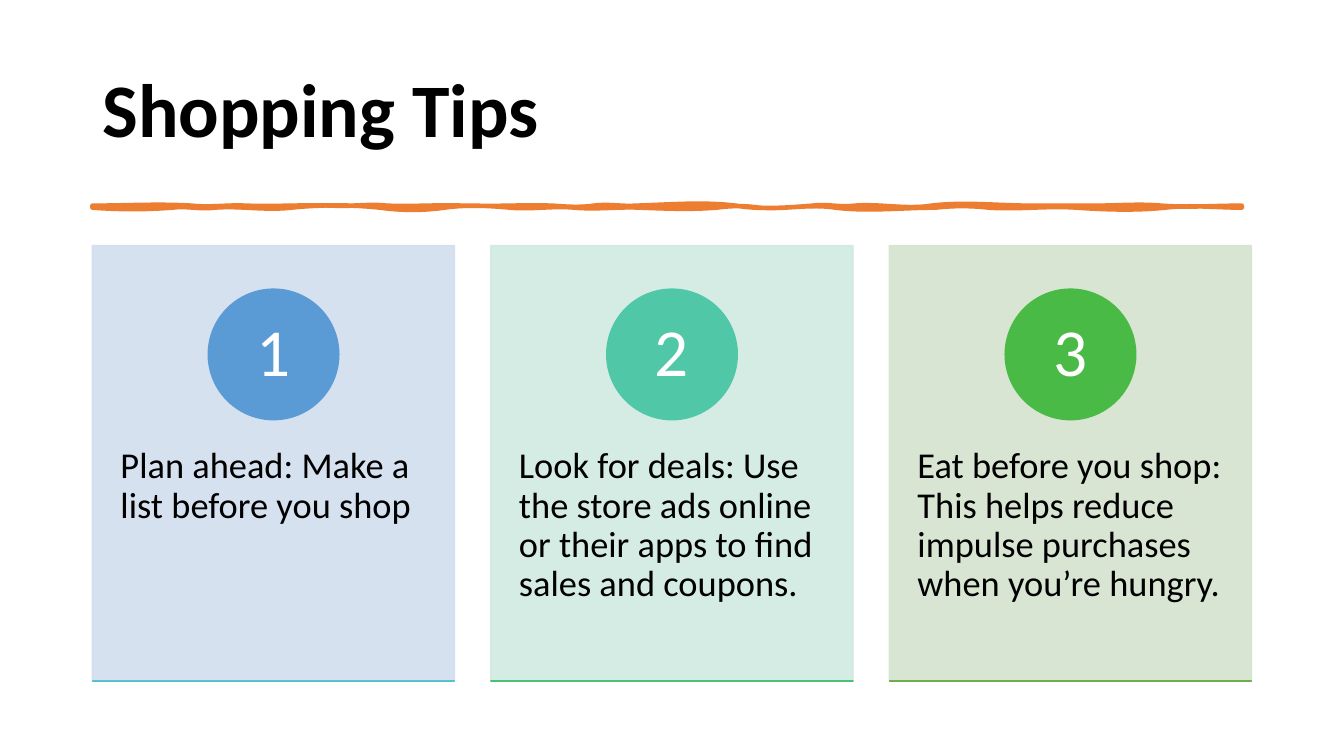
from dataclasses import dataclass

import lxml.etree
import pptx
import pptx.dml.color
import pptx.enum.shapes
import pptx.enum.text
import pptx.oxml.ns
import pptx.util

Pt = pptx.util.Pt
qn = pptx.oxml.ns.qn
PP_ALIGN = pptx.enum.text.PP_ALIGN
ANCHOR = pptx.enum.text.MSO_ANCHOR
SHAPE = pptx.enum.shapes.MSO_SHAPE

FONT = "Calibri"
BLACK, WHITE, ORANGE = "000000", "FFFFFF", "ED7D31"
LEFT, CONTENT_WIDTH = 66, 828
CARD_TOP, CARD_WIDTH, CARD_HEIGHT = 175.4, 258.75, 311
CARD_PITCH = (CONTENT_WIDTH - CARD_WIDTH) / 2
CIRCLE_SIZE = 0.3 * CARD_HEIGHT
CIRCLE_TOP = CARD_TOP + 0.1 * CARD_HEIGHT
TIP_TOP, TIP_HEIGHT = CARD_TOP + 0.38 * CARD_HEIGHT, 0.6 * CARD_HEIGHT
RULE_TOP, RULE_BOTTOM, RULE_RIGHT = 146.9, 148.3, 887
WAVE_STEP = 0.72


@dataclass
class Tip:
    text: str
    panel: str
    circle: str
    baseline: str


@dataclass
class Wave:
    """A curve ending at x, with its two handles offset in wave steps."""
    x: float
    first: int
    second: int


TIPS = [
    Tip("Plan ahead: Make a list before you shop", "D2DEEF", "5B9BD5", "55C3CF"),
    Tip("Look for deals: Use the store ads online or their apps to find sales and coupons.",
        "D0EAE1", "50C8A7", "4BC174"),
    Tip("Eat before you shop: This helps reduce impulse purchases when you’re hungry.",
        "D5E3CF", "4ABA46", "70AD47"),
]

TOP_WAVES = [
    Wave(136.8, 0, -2), Wave(175.7, 2, -1), Wave(238.3, 1, -1), Wave(276.5, 1, -2),
    Wave(331.2, 1, -1), Wave(394.6, 1, -1), Wave(424.1, 1, 2), Wave(454.3, -2, 1),
    Wave(525.6, -1, -4), Wave(580.3, 4, 2), Wave(610.6, -2, 2), Wave(665.3, -2, 4),
    Wave(736.6, -4, 0), Wave(782.6, 0, 0), Wave(829.4, 0, -2), Wave(RULE_RIGHT, 2, 0),
]
BOTTOM_WAVES = [
    Wave(832.3, 0, -3), Wave(769, 3, 2), Wave(706.3, -2, 2), Wave(668.2, -2, -2),
    Wave(596.9, 0, 4), Wave(542.2, -4, 2), Wave(511.9, -2, -2), Wave(457.2, 2, 1),
    Wave(410.4, -1, 2), Wave(364.3, -2, 2), Wave(317.5, -2, -3), Wave(271.4, 3, 3),
    Wave(208.1, -3, -3), Wave(153.4, 3, -2), Wave(123.1, 2, -2), Wave(LEFT, 2, 2),
]


def set_color(color_format, color: str) -> None:
    color_format.rgb = pptx.dml.color.RGBColor.from_string(color)


def paint(shape, color: str, line_width: float = 1, opacity: int = 100) -> None:
    shape.shadow.inherit = False
    for fill in (shape.fill, shape.line.fill):
        fill.solid()
        set_color(fill.fore_color, color)
    shape.line.width = Pt(line_width)
    if opacity < 100:
        for element in list(shape.element.spPr.iter(qn("a:srgbClr"))):
            lxml.etree.SubElement(element, qn("a:alpha"), val=str(opacity * 1000))


def write(shape, text: str, size: float, color: str, alignment=PP_ALIGN.LEFT,
          anchor=ANCHOR.MIDDLE, bold: bool = False,
          insets: tuple[float, float] = (7.2, 3.6)) -> None:
    frame = shape.text_frame
    frame.text = text
    frame.word_wrap = True
    frame.vertical_anchor = anchor
    frame.margin_left = frame.margin_right = Pt(insets[0])
    frame.margin_top = frame.margin_bottom = Pt(insets[1])
    paragraph = frame.paragraphs[0]
    paragraph.alignment = alignment
    paragraph.line_spacing = 0.9
    font = paragraph.runs[0].font
    font.name, font.size, font.bold = FONT, Pt(size), bold
    set_color(font.color, color)


def wave_points(start: float, y: float, waves: list[Wave]) -> list[tuple[int, int]]:
    """Give two handles and an end point for each wave along the height y."""
    points = []
    for wave in waves:
        third = (wave.x - start) / 3
        points += [
            (Pt(start + third), Pt(y + WAVE_STEP * wave.first)),
            (Pt(start + 2 * third), Pt(y + WAVE_STEP * wave.second)),
            (Pt(wave.x), Pt(y)),
        ]
        start = wave.x
    return points


def bend_lines(shape) -> None:
    """Turn each three successive line segments into one Bézier curve."""
    lines = list(shape.element.spPr.iter(qn("a:lnTo")))
    for index in range(0, len(lines), 3):
        curve = lxml.etree.Element(qn("a:cubicBezTo"))
        lines[index].addprevious(curve)
        for line in lines[index:index + 3]:
            curve.append(line[0])
            line.getparent().remove(line)


def add_title(slide) -> None:
    title = slide.shapes.title
    title.left, title.top = Pt(LEFT), Pt(28.8)
    title.width, title.height = Pt(CONTENT_WIDTH), Pt(104.4)
    write(title, "Shopping Tips", 54, BLACK, bold=True)


def add_wavy_rule(slide) -> None:
    builder = slide.shapes.build_freeform(Pt(LEFT), Pt(RULE_TOP))
    right_end = Wave(RULE_RIGHT, 0, 0)
    builder.add_line_segments(
        wave_points(LEFT, RULE_TOP, TOP_WAVES)
        + wave_points(RULE_RIGHT, RULE_BOTTOM, [right_end] + BOTTOM_WAVES), close=True)
    rule = builder.convert_to_shape()
    bend_lines(rule)
    paint(rule, ORANGE, line_width=3.25)


def add_card(slide, number: int, tip: Tip) -> None:
    left = LEFT + (number - 1) * CARD_PITCH
    panel = slide.shapes.add_shape(
        SHAPE.RECTANGLE, Pt(left), Pt(CARD_TOP), Pt(CARD_WIDTH), Pt(CARD_HEIGHT))
    paint(panel, tip.panel, opacity=90)

    text_box = slide.shapes.add_textbox(
        Pt(left), Pt(TIP_TOP), Pt(CARD_WIDTH), Pt(TIP_HEIGHT))
    write(text_box, tip.text, 26, BLACK, anchor=ANCHOR.TOP, insets=(20.1, 25.9))

    circle = slide.shapes.add_shape(
        SHAPE.OVAL, Pt(left + (CARD_WIDTH - CIRCLE_SIZE) / 2), Pt(CIRCLE_TOP),
        Pt(CIRCLE_SIZE), Pt(CIRCLE_SIZE))
    paint(circle, tip.circle)
    write(circle, str(number), 48, WHITE, PP_ALIGN.CENTER, insets=(7.2, 0.7))

    baseline = slide.shapes.add_shape(
        SHAPE.RECTANGLE, Pt(left), Pt(CARD_TOP + CARD_HEIGHT), Pt(CARD_WIDTH), Pt(0.01))
    paint(baseline, tip.baseline)


def main() -> None:
    presentation = pptx.Presentation()
    presentation.slide_width, presentation.slide_height = Pt(960), Pt(540)
    slide = presentation.slides.add_slide(presentation.slide_layouts.get_by_name("Title Only"))
    add_title(slide)
    add_wavy_rule(slide)
    for number, tip in enumerate(TIPS, start=1):
        add_card(slide, number, tip)
    presentation.save("out.pptx")


if __name__ == "__main__":
    main()
